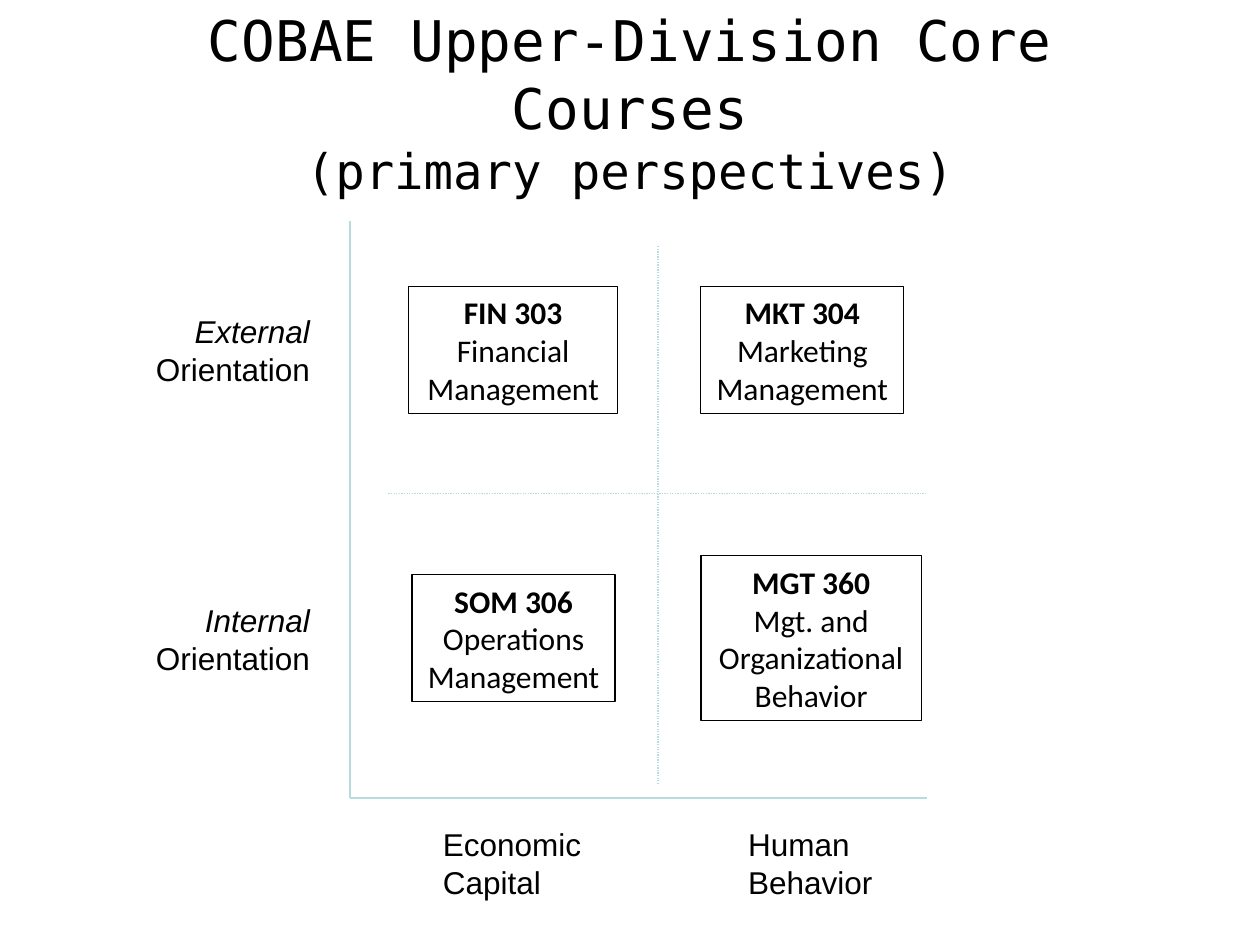
import pptx
import pptx.util
import pptx.dml.color
import pptx.enum.dml
import pptx.enum.shapes
import pptx.enum.text
import pptx.oxml.ns
from lxml import etree

Pt = pptx.util.Pt
Align = pptx.enum.text.PP_ALIGN
Anchor = pptx.enum.text.MSO_ANCHOR
Fit = pptx.enum.text.MSO_AUTO_SIZE


def color(code):
    return pptx.dml.color.RGBColor.from_string(code)


class Board:
    ink = "000000"
    pale = "B6DCDF"
    width = 0.75

    def __init__(self, deck):
        self.slide = deck.slides.add_slide(deck.slide_layouts[6])

    def fill_text(self, shape, rows, align, frame):
        text = shape.text_frame
        for name, value in frame.items():
            setattr(text, name, value)
        for index, (words, style) in enumerate(rows):
            para = text.paragraphs[0] if index == 0 else text.add_paragraph()
            para.alignment = align
            run = para.add_run()
            run.text = words
            run.font.color.rgb = color(self.ink)
            for name, value in style.items():
                setattr(run.font, name, value)

    def title(self, area, rows):
        shape = self.slide.shapes.add_textbox(*map(Pt, area))
        font = {"name": "DejaVu Sans Mono"}
        rows = [(words, {**font, "size": Pt(size)}) for words, size in rows]
        frame = {"word_wrap": True, "vertical_anchor": Anchor.MIDDLE}
        self.fill_text(shape, rows, Align.CENTER, frame)

    def label(self, area, lines, align, slant=False):
        shape = self.slide.shapes.add_textbox(*map(Pt, area))
        font = {"name": "Arial", "size": Pt(18)}
        rows = [(words, {**font, "italic": slant and index == 0})
                for index, words in enumerate(lines)]
        frame = {"word_wrap": False, "auto_size": Fit.SHAPE_TO_FIT_TEXT}
        self.fill_text(shape, rows, align, frame)

    def course(self, left, mid, width, lines):
        high = 21.75 * len(lines) + 7.25
        kind = pptx.enum.shapes.MSO_SHAPE.RECTANGLE
        area = (left, mid - high / 2, width, high)
        shape = self.slide.shapes.add_shape(kind, *map(Pt, area))
        shape.shadow.inherit = False
        shape.fill.background()
        shape.line.color.rgb = color(self.ink)
        shape.line.width = Pt(self.width)
        font = {"name": "Calibri", "size": Pt(18)}
        rows = [(words, {**font, "bold": index == 0})
                for index, words in enumerate(lines)]
        frame = {"word_wrap": False, "vertical_anchor": Anchor.MIDDLE,
                 "auto_size": Fit.SHAPE_TO_FIT_TEXT}
        self.fill_text(shape, rows, Align.CENTER, frame)

    def line(self, start, end, dots=False):
        kind = pptx.enum.shapes.MSO_CONNECTOR.STRAIGHT
        line = self.slide.shapes.add_connector(kind, *map(Pt, start + end))
        line.line.color.rgb = color(self.pale)
        line.line.width = Pt(self.width)
        if dots:
            line.line.dash_style = pptx.enum.dml.MSO_LINE.ROUND_DOT
        props = line._element.spPr
        etree.SubElement(props, pptx.oxml.ns.qn("a:effectLst"))


def main():
    deck = pptx.Presentation()
    deck.slide_width, deck.slide_height = Pt(720), Pt(540)
    board = Board(deck)
    board.title((36, 21.6, 648, 74), [
        ("COBAE Upper-Division Core Courses", 32),
        ("(primary perspectives)", 28),
    ])

    left, right, top, base = 200, 530, 126, 456
    board.line((left, top), (left, base))
    board.line((left, base), (right, base))

    for x, width, lines in [
        (246, 94.5, ["Economic", "Capital"]),
        (420.5, 86.5, ["Human", "Behavior"]),
    ]:
        board.label((x, 468, width, 51), lines, Align.LEFT)

    upper, lower = 200, 364.75
    for mid, word in [(upper, "External"), (lower, "Internal")]:
        area = (80.25, mid - 25, 104, 51)
        board.label(area, [word, "Orientation"], Align.RIGHT, True)

    for x, mid, width, lines in [
        (233.5, upper, 119.5, ["FIN 303", "Financial", "Management"]),
        (235.5, lower, 116, ["SOM 306", "Operations", "Management"]),
        (400.5, upper, 116, ["MKT 304", "Marketing", "Management"]),
        (400.5, lower, 126,
         ["MGT 360", "Mgt. and", "Organizational", "Behavior"]),
    ]:
        board.course(x, mid, width, lines)

    board.line((222, 282), (right, 282), True)
    board.line((376, 448), (376, 140), True)
    deck.save("out.pptx")


if __name__ == "__main__":
    main()
